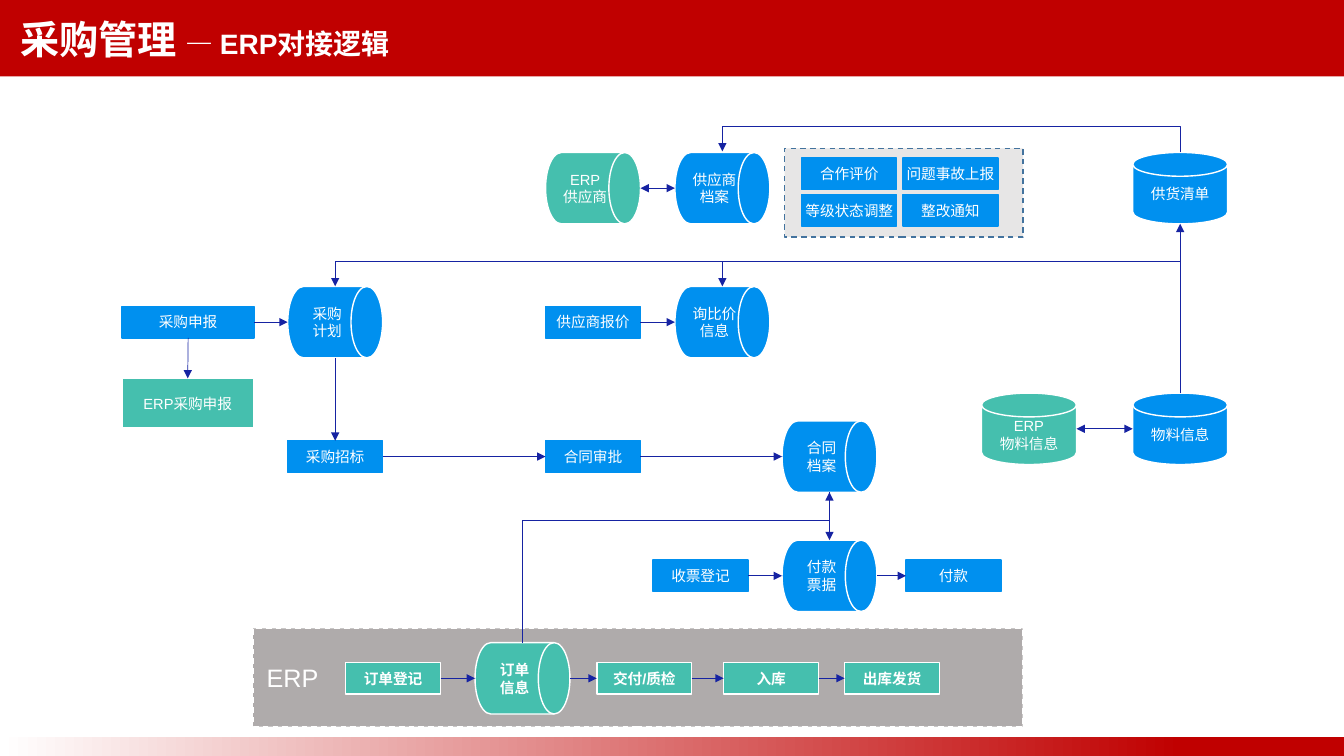
from pptx import Presentation, util as u
from pptx.dml.color import RGBColor
from pptx.enum import dml, shapes, text
from pptx.oxml.ns import qn
from lxml import etree

COLS, ROWS = 160, 90
BLUE, TEAL, RED, WHITE, NAVY = "0090EF", "45BFAE", "C00000", "FFFFFF", "1623A2"
SHAPE = shapes.MSO_SHAPE
RECT, DRUM, DISK = SHAPE.RECTANGLE, SHAPE.FLOWCHART_DIRECT_ACCESS_STORAGE, SHAPE.FLOWCHART_MAGNETIC_DISK
NODE_W, BOX_H, STORE_H = 11.3, 3.75, 8.5


def rgb(value):
    return RGBColor.from_string(value)


class Board:
    font, size = "Arial", 10.5

    def __init__(self, prs):
        self.s = prs.slides.add_slide(prs.slide_layouts[6])
        self.col, self.row = prs.slide_width / COLS, prs.slide_height / ROWS

    def x(self, cols):
        return round(cols * self.col)

    def y(self, rows):
        return round(rows * self.row)

    def panel(self, col, row, cols, rows, fill, line=None, dash=False, kind=RECT):
        sp = self.s.shapes.add_shape(kind, self.x(col), self.y(row), self.x(cols), self.y(rows))
        sp.shadow.inherit = False
        sp.fill.solid()
        sp.fill.fore_color.rgb = rgb(fill)
        if line:
            sp.line.color.rgb = rgb(line)
            sp.line.width = u.Pt(1)
            if dash:
                sp.line.dash_style = dml.MSO_LINE.DASH
        else:
            sp.line.fill.background()
        return sp

    def fade(self, col, row, cols, rows, start, end, reach):
        sp = self.panel(col, row, cols, rows, end)
        sp.fill.gradient()
        sp.fill.gradient_angle = 0
        for stop, color, position in zip(sp.fill.gradient_stops, (start, end), (0, reach)):
            stop.color.rgb = rgb(color)
            stop.position = position

    def label(self, sp, words, size=None, bold=False, align=text.PP_ALIGN.CENTER, inset=0):
        tf = sp.text_frame
        tf.word_wrap = True
        tf.vertical_anchor = text.MSO_ANCHOR.MIDDLE
        tf.margin_left, tf.margin_right = self.x(inset), 0
        tf.text = words
        for p in tf.paragraphs:
            p.alignment = align
            p.font.name, p.font.size = self.font, u.Pt(size or self.size)
            p.font.bold = bold
            p.font.color.rgb = rgb(WHITE)

    def title(self, col, row, cols, rows, runs):
        tf = self.s.shapes.add_textbox(self.x(col), self.y(row), self.x(cols), self.y(rows)).text_frame
        tf.word_wrap = True
        p = tf.paragraphs[0]
        p.line_spacing = 1.1
        p.font.name, p.font.bold = self.font, True
        for words, size in runs:
            r = p.add_run()
            r.text = words
            r.font.name, r.font.size, r.font.bold = self.font, u.Pt(size), True
            r.font.color.rgb = rgb(WHITE)

    def node(self, words, col, row, kind=RECT, fill=BLUE, line=None, cols=NODE_W, rows=None, bold=False):
        rows = rows or (BOX_H if kind == RECT else STORE_H)
        line = line or (BLUE if kind == RECT and fill == BLUE else WHITE)
        sp = self.panel(col - cols / 2, row - rows / 2, cols, rows, fill, line, kind=kind)
        self.label(sp, words, bold=bold)
        return sp

    def connector(self, kind, x1, y1, x2, y2, both=False):
        cx = self.s.shapes.add_connector(kind, x1, y1, x2, y2)
        cx.line.color.rgb = rgb(NAVY)
        cx.line.width = u.Pt(0.5)
        ln = cx.line._get_or_add_ln()
        for end in ("a:headEnd", "a:tailEnd") if both else ("a:tailEnd",):
            etree.SubElement(ln, qn(end), type="triangle")
        etree.SubElement(cx._element.spPr, qn("a:effectLst"))
        return cx

    def across(self, a, b, both=False):
        self.connector(shapes.MSO_CONNECTOR.STRAIGHT, a.left + a.width, a.top + a.height // 2,
                       b.left, b.top + b.height // 2, both)

    def down(self, a, b):
        self.connector(shapes.MSO_CONNECTOR.STRAIGHT, a.left + a.width // 2, a.top + a.height,
                       b.left + b.width // 2, b.top)

    def up(self, a, b):
        self.connector(shapes.MSO_CONNECTOR.STRAIGHT, a.left + a.width // 2, a.top,
                       b.left + b.width // 2, b.top + b.height)

    def route(self, a, b, row, below=False):
        x1, y1 = a.left + a.width // 2, a.top
        x2, y2 = b.left + b.width // 2, b.top + (b.height if below else 0)
        rise = max(y1 - y2, self.y(0.12))
        run = abs(x2 - x1)
        left, top = (x1 + x2 - rise) // 2, y1 - (rise + run) // 2
        cx = self.connector(shapes.MSO_CONNECTOR.ELBOW, left, top, left + rise, top + run)
        xfrm = cx._element.spPr.find(qn("a:xfrm"))
        xfrm.set("rot", "16200000")
        if x2 < x1:
            xfrm.set("flipV", "1")
        bend = round((y1 - self.y(row)) / rise * 100000)
        guides = cx._element.spPr.find(qn("a:prstGeom")).get_or_add_avLst()
        etree.SubElement(guides, qn("a:gd"), name="adj1", fmla=f"val {bend}")


def main():
    prs = Presentation()
    prs.slide_width, prs.slide_height = u.Inches(13.33), u.Inches(7.5)
    b = Board(prs)
    b.panel(0, 0, COLS, 9.1, RED)
    b.fade(0, 87.8, COLS, 2.2, WHITE, RED, 0.88)
    b.title(1.2, 0.7, 122, 7.2, [("采购管理 ", 28), ("— ERP对接逻辑", 20)])
    erp = b.panel(30.15, 74.8, 91.6, 11.7, "AFABAB", WHITE, dash=True)
    b.label(erp, "ERP", 18, align=text.PP_ALIGN.LEFT, inset=1.6)
    b.panel(93.4, 17.65, 28.4, 10.55, "E7E6E6", "43739E", dash=True)

    ratings = [["合作评价", "问题事故上报"], ["等级状态调整", "整改通知"]]
    for i, line in enumerate(ratings):
        for j, words in enumerate(line):
            b.node(words, 101.1 + 12.05 * j, 20.7 + 4.35 * i)

    supply, plan_row, contract_row, stock_row, bill_row, order_row = 22.4, 38.35, 54.35, 51.05, 68.55, 80.75
    plan_col, quote_col, archive_col, contract_col, item_col = 39.9, 70.6, 86, 98.75, 140.5

    erp_supplier = b.node("ERP\n供应商", quote_col, supply, DRUM, TEAL)
    supplier = b.node("供应商档案", archive_col, supply, DRUM)
    supply_list = b.node("供货清单", item_col, supply, DISK)
    request = b.node("采购申报", 22.4, plan_row, cols=15.7)
    erp_request = b.node("ERP采购申报", 22.35, 48, fill=TEAL, cols=15.6, rows=5.9)
    plan = b.node("采购\n计划", plan_col, plan_row, DRUM)
    quote = b.node("供应商报价", quote_col, plan_row)
    inquiry = b.node("询比价信息", archive_col, plan_row, DRUM)
    tender = b.node("采购招标", plan_col, contract_row)
    approval = b.node("合同审批", quote_col, contract_row)
    contract = b.node("合同\n档案", contract_col, contract_row, DRUM)
    erp_item = b.node("ERP\n物料信息", 122.5, stock_row, DISK, TEAL)
    item = b.node("物料信息", item_col, stock_row, DISK)
    receipt = b.node("收票登记", 83.4, bill_row)
    bill = b.node("付款\n票据", contract_col, bill_row, DRUM)
    payment = b.node("付款", 113.5, bill_row)

    steps = [("订单登记", 46.8, RECT), ("订单\n信息", 62.2, DRUM), ("交付/质检", 76.7, RECT),
             ("入库", 91.8, RECT), ("出库发货", 106.2, RECT)]
    orders = [b.node(words, col, order_row, kind, TEAL, bold=True) for words, col, kind in steps]

    pairs = [(request, plan), (quote, inquiry), (tender, approval), (approval, contract),
             (receipt, bill), (bill, payment), *zip(orders, orders[1:])]
    for start, end in pairs:
        b.across(start, end)
    b.across(erp_supplier, supplier, both=True)
    b.across(erp_item, item, both=True)
    for start, end in [(request, erp_request), (plan, tender), (contract, bill)]:
        b.down(start, end)
    b.up(item, supply_list)
    b.route(item, plan, 31.1)
    b.route(item, inquiry, 31.1)
    b.route(supply_list, supplier, 15)
    b.route(orders[1], contract, 62, below=True)
    prs.save("out.pptx")


if __name__ == "__main__":
    main()
